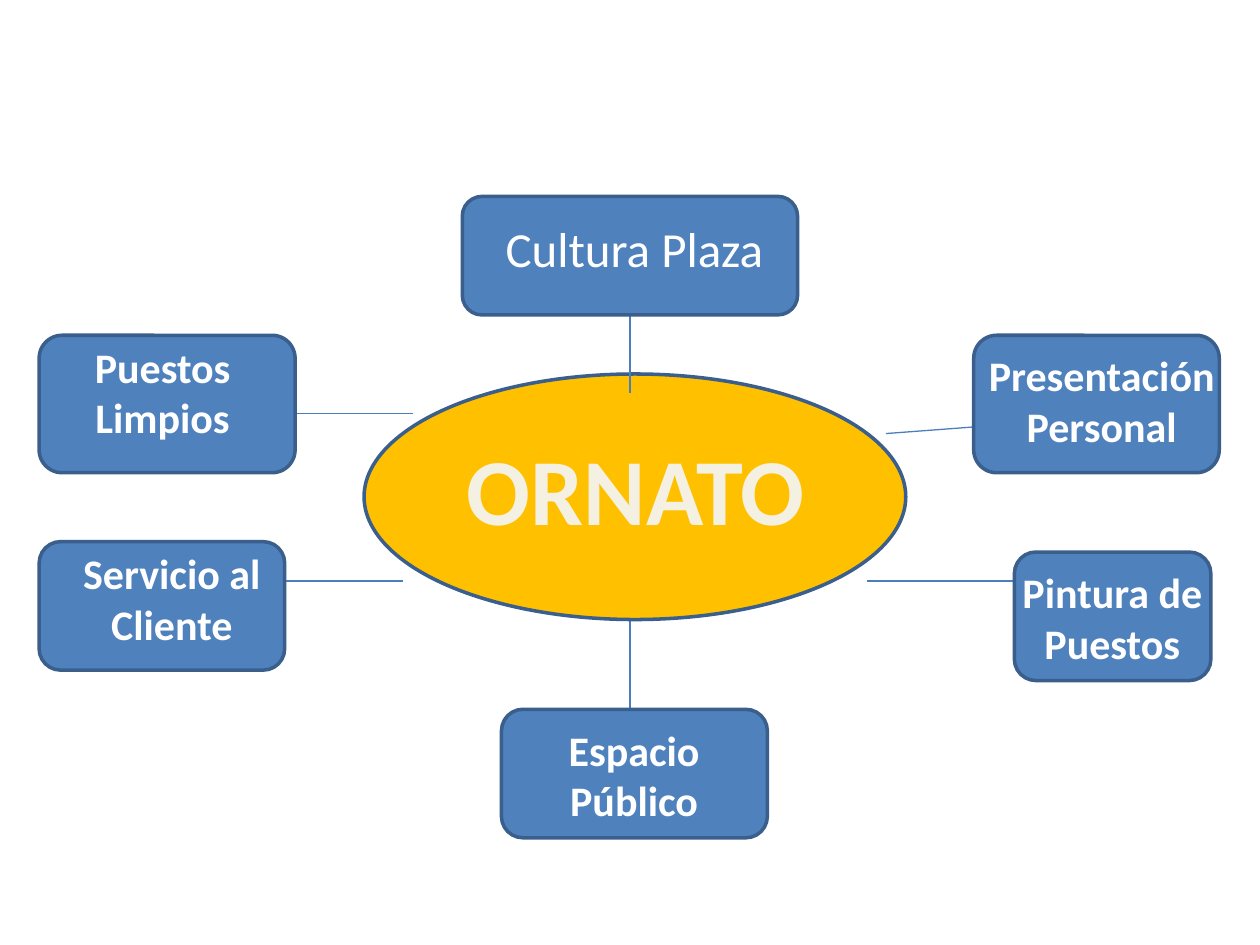
"""Build a mind map slide with ORNATO at the centre and six themes around it."""
from lxml.etree import SubElement
from pptx import Presentation
from pptx.dml.color import RGBColor
from pptx.enum.shapes import MSO_CONNECTOR, MSO_SHAPE
from pptx.enum.text import MSO_AUTO_SIZE, PP_ALIGN
from pptx.oxml.ns import qn
from pptx.util import Cm, Pt

BLUE = RGBColor(0x4F, 0x81, 0xBD)
BORDER = RGBColor(0x3A, 0x5F, 0x8C)
LINK = RGBColor(0x4B, 0x7E, 0xBC)
GOLD = RGBColor(0xFF, 0xC0, 0x00)
CREAM = RGBColor(0xF4, 0xF1, 0xE3)
WHITE = RGBColor(0xFF, 0xFF, 0xFF)

CENTRE = (7.34, 7.54, 10.92, 4.95)
CENTRE_LABEL = (9.12, 8.56, 7.39, 2.57)
LOWER_LINK = (12.7, 14.48, 12.7, 11.71)
UPPER_LINKS = [
    (17.86, 8.74, 20.65, 8.53),
    (17.48, 11.71, 20.83, 11.71),
    (12.7, 7.92, 12.7, 5.66),
    (5.77, 8.33, 8.33, 8.33),
    (5.77, 11.71, 8.13, 11.71),
]
THEMES = [
    ("Cultura Plaza", (9.32, 3.96, 6.76, 2.39), (9.12, 4.29, 7.34, 1.45), {"size": 28, "bold": False}),
    ("Puestos Limpios", (0.79, 6.76, 5.16, 2.77), (1.4, 6.76, 3.76, 2.31), {}),
    ("Servicio al Cliente", (0.79, 10.92, 4.95, 2.59), (0.99, 10.92, 4.95, 2.31), {}),
    ("Presentación Personal", (19.63, 6.76, 4.95, 2.77), (19.63, 6.93, 5.16, 2.31), {}),
    ("Pintura de Puestos", (20.45, 11.13, 3.96, 2.59), (20.24, 11.3, 4.37, 2.31), {}),
    ("Espacio Público", (10.11, 14.3, 5.36, 2.59), (10.31, 14.48, 4.95, 2.31), {}),
]


def add_text(page, text, place, size=24, bold=True, color=WHITE, wrap=True):
    box = page.shapes.add_textbox(*map(Cm, place))
    frame = box.text_frame
    frame.word_wrap = wrap
    frame.auto_size = MSO_AUTO_SIZE.SHAPE_TO_FIT_TEXT
    para = frame.paragraphs[0]
    para.alignment = PP_ALIGN.CENTER
    span = para.add_run()
    span.text = text
    span.font.name = "Calibri"
    span.font.size = Pt(size)
    span.font.bold = bold
    span.font.color.rgb = color


def add_outlined(page, kind, place, fill):
    shape = page.shapes.add_shape(kind, *map(Cm, place))
    shape.shadow.inherit = False
    shape.fill.solid()
    shape.fill.fore_color.rgb = fill
    shape.line.color.rgb = BORDER
    shape.line.width = Pt(2)


def add_link(page, ends):
    link = page.shapes.add_connector(MSO_CONNECTOR.STRAIGHT, *map(Cm, ends))
    link.line.color.rgb = LINK
    link.line.width = Pt(0.75)
    SubElement(link._element.spPr, qn("a:effectLst"))


def main():
    deck = Presentation()
    deck.slide_width, deck.slide_height = Cm(25.4), Cm(19.05)
    page = deck.slides.add_slide(deck.slide_layouts[6])
    add_link(page, LOWER_LINK)
    add_outlined(page, MSO_SHAPE.OVAL, CENTRE, GOLD)
    add_text(page, "ORNATO", CENTRE_LABEL, size=54, color=CREAM, wrap=False)
    for ends in UPPER_LINKS:
        add_link(page, ends)
    for _, place, _, _ in THEMES:
        add_outlined(page, MSO_SHAPE.ROUNDED_RECTANGLE, place, BLUE)
    for text, _, place, style in THEMES:
        add_text(page, text, place, **style)
    deck.save("out.pptx")


if __name__ == "__main__":
    main()
